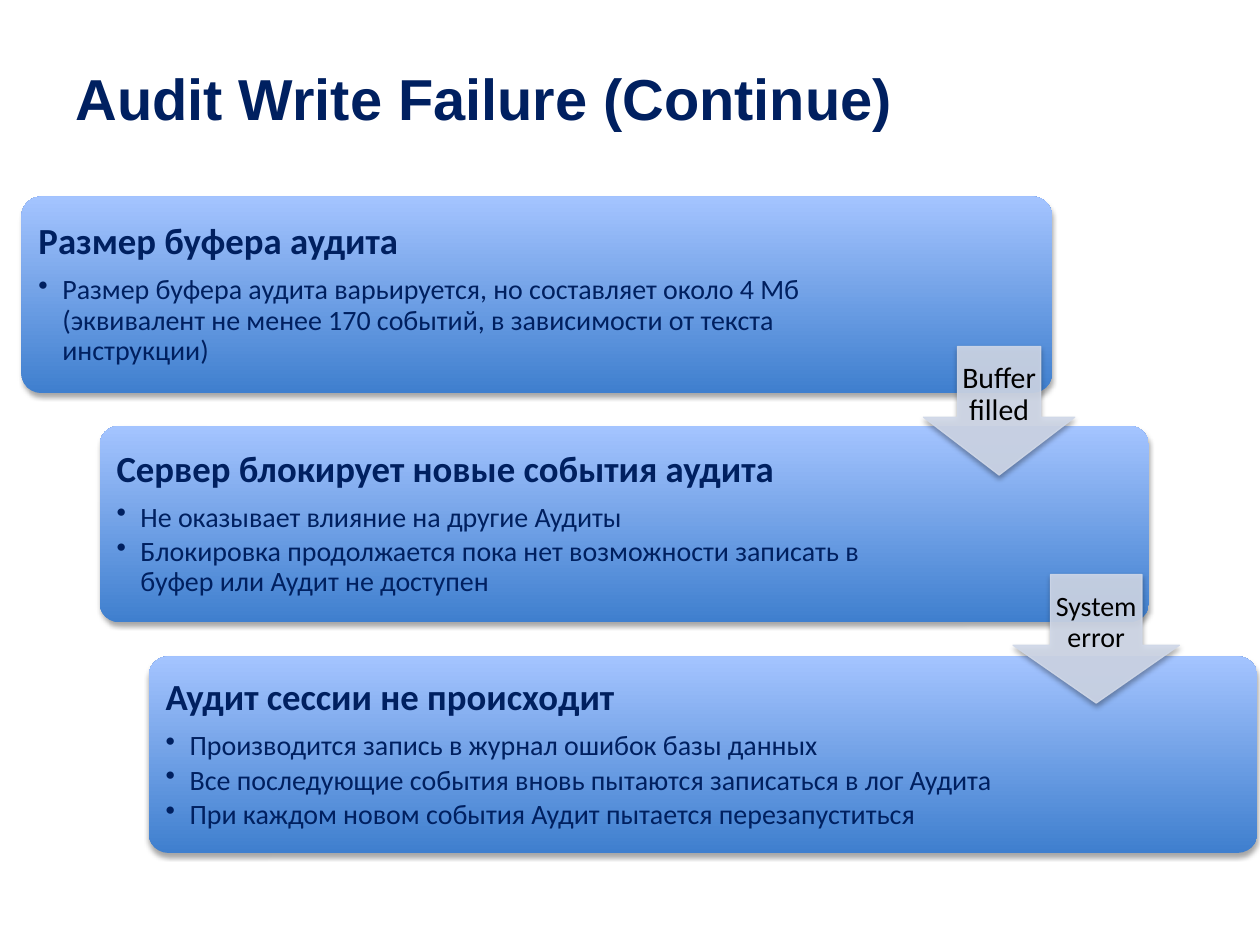
"""Build the audit write failure slide: three stepped panels joined by labelled arrows."""
from lxml import etree
from pptx import Presentation
from pptx.dml.color import RGBColor
from pptx.enum.shapes import MSO_SHAPE
from pptx.enum.text import MSO_ANCHOR, PP_ALIGN
from pptx.oxml.ns import qn
from pptx.util import Inches, Pt

ROUNDED, DOWN_ARROW = MSO_SHAPE.ROUNDED_RECTANGLE, MSO_SHAPE.DOWN_ARROW
MIDDLE, LEFT, CENTER = MSO_ANCHOR.MIDDLE, PP_ALIGN.LEFT, PP_ALIGN.CENTER

THEME = {
    "navy": "002060", "black": "000000", "panel_bottom": "3F7FCE",
    "panel_top": "A4C4FF", "arrow": "D0D8E8",
    "title_font": "Arial", "body_font": "Calibri",
    "title_size": 33, "heading_size": 21, "bullet_size": 16,
}

TITLE = "Audit Write Failure (Continue)"
PANELS = [
    {"left": 0.17, "top": 1.56, "width": 8.18, "text_width": 6.59,
     "heading": "Размер буфера аудита",
     "bullets": ["Размер буфера аудита варьируется, но составляет около 4 Мб "
                 "(эквивалент не менее 170 событий, в зависимости от текста инструкции)"]},
    {"left": 0.79, "top": 3.38, "width": 8.33, "text_width": 6.54,
     "heading": "Сервер блокирует новые события аудита",
     "bullets": ["Не оказывает влияние на другие Аудиты",
                 "Блокировка продолжается пока нет возможности записать в буфер "
                 "или Аудит не доступен"]},
    {"left": 1.18, "top": 5.21, "width": 8.8, "text_width": 6.91,
     "heading": "Аудит сессии не происходит",
     "bullets": ["Производится запись в журнал ошибок базы данных",
                 "Все последующие события вновь пытаются записаться в лог Аудита",
                 "При каждом новом события Аудит пытается перезапуститься"]},
]
ARROWS = [
    {"left": 7.33, "top": 2.75, "width": 1.2, "label": "Buffer filled", "size": 17},
    {"left": 8.04, "top": 4.56, "width": 1.32, "label": "System error", "size": 16},
]
PANEL_HEIGHT, PANEL_INSET = 1.56, 0.045
ARROW_HEIGHT, LABEL_HEIGHT = 1.02, 0.77
SHAFT, HEAD = 0.55, 0.45
HEADING_GAP, BULLET_GAP = 0.35, 0.15


def color(name):
    return RGBColor.from_string(THEME[name])


def apply(target, values):
    for name, value in values.items():
        setattr(target, name, value)


def add_shadow(shape):
    shape.shadow.inherit = False
    effects = shape._element.spPr.find(qn("a:effectLst"))
    shadow = etree.SubElement(effects, qn("a:outerShdw"), blurRad=str(Pt(3.1)),
                              dist=str(Pt(1.8)), dir="5400000", rotWithShape="0")
    black = etree.SubElement(shadow, qn("a:srgbClr"), val=THEME["black"])
    etree.SubElement(black, qn("a:alpha"), val="35000")


def add_shape(slide, kind, box, adjustments):
    shape = slide.shapes.add_shape(kind, *map(Inches, box))
    for index, value in enumerate(adjustments):
        shape.adjustments[index] = value
    return shape


def add_text_frame(slide, box, margin):
    frame = slide.shapes.add_textbox(*map(Inches, box)).text_frame
    sides = ("left", "top", "right", "bottom")
    apply(frame, {"word_wrap": True, "vertical_anchor": MIDDLE,
                  **{f"margin_{side}": Inches(margin) for side in sides}})
    return frame


def write(paragraph, text, size, gap, ink="navy", bold=False, align=LEFT, font="body_font"):
    paragraph.text = text
    apply(paragraph, {"line_spacing": 0.9, "space_after": Pt(size * gap), "alignment": align})
    apply(paragraph.font, {"name": THEME[font], "size": Pt(size), "bold": bold})
    paragraph.font.color.rgb = color(ink)


def add_bullet(paragraph):
    properties = paragraph._p.get_or_add_pPr()
    properties.set("marL", str(Inches(0.19)))
    properties.set("indent", str(Inches(-0.19)))
    etree.SubElement(properties, qn("a:buChar"), char="•")


def add_panel(slide, panel):
    left, top, width = panel["left"], panel["top"], panel["width"]
    shape = add_shape(slide, ROUNDED, (left, top, width, PANEL_HEIGHT), [0.1])
    shape.fill.gradient()
    shape.fill.gradient_angle = 90
    for stop, name in zip(shape.fill.gradient_stops, ("panel_bottom", "panel_top")):
        stop.color.rgb = color(name)
    shape.line.fill.background()
    add_shadow(shape)
    box = (left + PANEL_INSET, top + PANEL_INSET, panel["text_width"],
           PANEL_HEIGHT - 2 * PANEL_INSET)
    frame = add_text_frame(slide, box, 0.09)
    write(frame.paragraphs[0], panel["heading"], THEME["heading_size"], HEADING_GAP, bold=True)
    for bullet in panel["bullets"]:
        paragraph = frame.add_paragraph()
        add_bullet(paragraph)
        write(paragraph, bullet, THEME["bullet_size"], BULLET_GAP)


def add_arrow(slide, arrow):
    left, top, width = arrow["left"], arrow["top"], arrow["width"]
    adjustments = [SHAFT, HEAD * ARROW_HEIGHT / min(width, ARROW_HEIGHT)]
    shape = add_shape(slide, DOWN_ARROW, (left, top, width, ARROW_HEIGHT), adjustments)
    shape.line.width = Pt(0.75)
    for fill in (shape.fill, shape.line.fill):
        fill.solid()
        fill.fore_color.rgb = color("arrow")
    for tint in shape._element.spPr.iter(qn("a:srgbClr")):
        etree.SubElement(tint, qn("a:alpha"), val="90000")
    add_shadow(shape)
    label_width = width * SHAFT
    box = (left + (width - label_width) / 2, top, label_width, LABEL_HEIGHT)
    frame = add_text_frame(slide, box, 0.02)
    write(frame.paragraphs[0], arrow["label"], arrow["size"], HEADING_GAP,
          ink="black", align=CENTER)


def add_title(slide):
    title = slide.shapes.title
    places = ("left", "top", "width", "height")
    apply(title, dict(zip(places, map(Inches, (0.5, 0.15, 9, 1.25)))))
    title.text_frame.vertical_anchor = MIDDLE
    write(title.text_frame.paragraphs[0], TITLE, THEME["title_size"], 0,
          bold=True, font="title_font")
    title.text_frame.paragraphs[0].line_spacing = 1.0


def main():
    presentation = Presentation()
    apply(presentation, {"slide_width": Inches(10), "slide_height": Inches(7.5)})
    slide = presentation.slides.add_slide(presentation.slide_layouts[5])
    add_title(slide)
    for panel in PANELS:
        add_panel(slide, panel)
    for arrow in ARROWS:
        add_arrow(slide, arrow)
    presentation.save("out.pptx")


if __name__ == "__main__":
    main()
